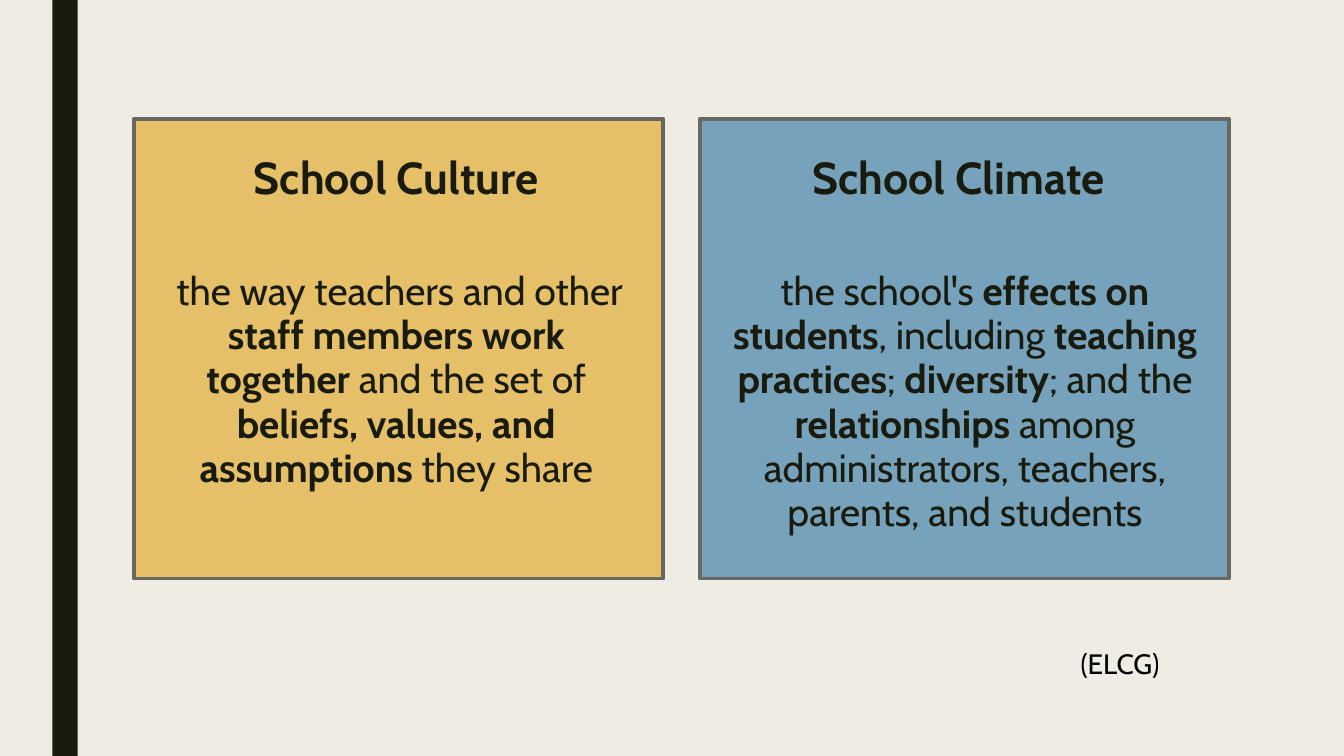
"""Build a slide that sets school culture beside school climate."""
from pptx import Presentation
from pptx.dml.color import RGBColor
from pptx.enum.shapes import MSO_SHAPE
from pptx.enum.text import MSO_ANCHOR, PP_ALIGN
from pptx.util import Inches, Pt

COLORS = {
    "paper": "EFEDE3",
    "ink": "191B0E",
    "border": "686863",
    "gold": "E6C069",
    "blue": "77A2BB",
    "black": "000000",
}


def add_block(page, left, top, width, height, fill, line=None):
    block = page.shapes.add_shape(
        MSO_SHAPE.RECTANGLE, Inches(left), Inches(top), Inches(width), Inches(height))
    block.shadow.inherit = False
    block.fill.solid()
    block.fill.fore_color.rgb = RGBColor.from_string(COLORS[fill])
    if line:
        block.line.color.rgb = RGBColor.from_string(COLORS[line])
        block.line.width = Pt(2.75)
    else:
        block.line.fill.background()


def add_text(page, spans, left, top, width, height, color="ink", anchor=MSO_ANCHOR.TOP,
             align=PP_ALIGN.CENTER, spacing=1.0, before=0, after=0):
    box = page.shapes.add_textbox(Inches(left), Inches(top), Inches(width), Inches(height))
    box.text_frame.word_wrap = True
    box.text_frame.vertical_anchor = anchor
    para = box.text_frame.paragraphs[0]
    para.alignment = align
    para.line_spacing = spacing
    para.space_before = Pt(before)
    para.space_after = Pt(after)
    for text, size, bold in spans:
        span = para.add_run()
        span.text = text
        span.font.name = "Cabin"
        span.font.size = Pt(size)
        span.font.bold = bold
        span.font.color.rgb = RGBColor.from_string(COLORS[color])


deck = Presentation()
deck.slide_width = Inches(13.33)
deck.slide_height = Inches(7.5)
page = deck.slides.add_slide(deck.slide_layouts[6])
page.background.fill.solid()
page.background.fill.fore_color.rgb = RGBColor.from_string(COLORS["paper"])

add_block(page, 0.52, 0, 0.25, 7.5, "ink")

cards = [
    (1.33, "gold", 1.5, "School Culture", 1.5, [
        (" ", 20, False),
        ("the way teachers and other ", 28, False),
        ("staff members work together ", 28, True),
        ("and the set of ", 28, False),
        ("beliefs, values, and assumptions ", 28, True),
        ("they share", 28, False),
    ]),
    (6.94, "blue", 7.08, "School Climate", 7.14, [
        ("the school's ", 28, False),
        ("effects on students", 28, True),
        (", including ", 28, False),
        ("teaching practices", 28, True),
        ("; ", 28, False),
        ("diversity", 28, True),
        ("; and the ", 28, False),
        ("relationships", 28, True),
        (" among administrators, teachers, parents, and students", 28, False),
    ]),
]
for card_left, fill, title_left, title, body_left, body in cards:
    add_block(page, card_left, 1.18, 5.25, 4.56, fill, line="border")
    add_text(page, [(title, 32, True)], title_left, 1.43, 4.86, 0.64,
             anchor=MSO_ANCHOR.BOTTOM, spacing=0.84)
    add_text(page, body, body_left, 2.63, 4.86, 2.8, spacing=0.94, before=10, after=2)

add_text(page, [("(ELCG)", 20, False)], 10.62, 6.36, 1.37, 0.44,
         color="black", align=PP_ALIGN.LEFT)

deck.save("out.pptx")
